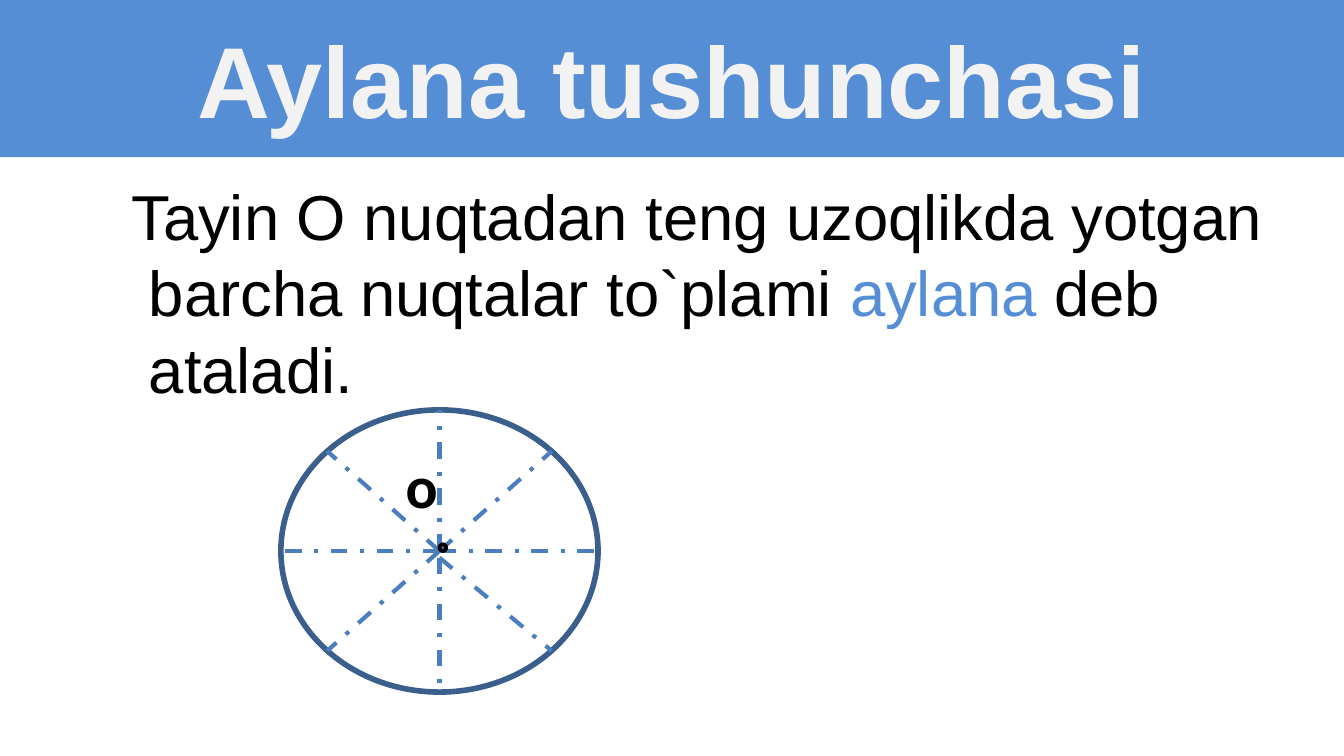
from dataclasses import dataclass
from math import cos, radians, sin

from lxml import etree
from pptx import Presentation
from pptx.dml.color import RGBColor
from pptx.enum.dml import MSO_LINE
from pptx.enum.shapes import MSO_CONNECTOR, MSO_SHAPE
from pptx.enum.text import MSO_ANCHOR, PP_ALIGN
from pptx.oxml.ns import qn
from pptx.util import Inches, Pt

RECT, OVAL = MSO_SHAPE.RECTANGLE, MSO_SHAPE.OVAL
LINE = MSO_CONNECTOR.STRAIGHT
DASH = MSO_LINE.DASH_DOT
MIDDLE, CENTER = MSO_ANCHOR.MIDDLE, PP_ALIGN.CENTER


@dataclass(frozen=True)
class Theme:
    blue: str = "558ED5"
    pale: str = "F2F2F2"
    white: str = "FFFFFF"
    black: str = "000000"
    rim: str = "3A5F8C"
    spoke: str = "4B7EBC"
    dot: str = "4F81BD"
    font: str = "Arial"
    label_font: str = "Calibri"
    title: int = 54
    body: int = 34
    label: int = 32


@dataclass(frozen=True)
class Box:
    left: float
    top: float
    width: float
    height: float

    def emu(self) -> tuple:
        return tuple(map(Inches, (self.left, self.top, self.width, self.height)))


@dataclass(frozen=True)
class Spoke:
    angle: int  # degrees, clockwise from the right
    start: float  # height of the inner end


THEME = Theme()
WIDTH = 10
HEIGHT = WIDTH * 9 / 16
CIRCLE = Box(2.09, 3.05, 2.36, 2.1)
MID_X = CIRCLE.left + CIRCLE.width / 2
MID_Y = CIRCLE.top + CIRCLE.height / 2
LOW_Y = MID_Y + 0.05
SPOKES = [Spoke(a, LOW_Y if a in (45, 90) else MID_Y) for a in range(0, 360, 45)]


def color(code: str) -> RGBColor:
    return RGBColor.from_string(code)


def style(run, font: str, size: int, code: str, bold: bool = False) -> None:
    run.font.name = font
    run.font.size = Pt(size)
    run.font.color.rgb = color(code)
    run.font.bold = bold


def add_shape(slide, kind, box: Box, fill: str, line: str = "", width: float = 0):
    shape = slide.shapes.add_shape(kind, *box.emu())
    shape.shadow.inherit = False
    shape.fill.solid()
    shape.fill.fore_color.rgb = color(fill)
    if line:
        shape.line.color.rgb = color(line)
        shape.line.width = Pt(width)
    else:
        shape.line.fill.background()
    return shape


def add_spoke(slide, spoke: Spoke) -> None:
    turn = radians(spoke.angle)
    tip_x = MID_X + CIRCLE.width / 2 * cos(turn)
    tip_y = MID_Y + CIRCLE.height / 2 * sin(turn)
    ends = map(Inches, (MID_X, spoke.start, tip_x, tip_y))
    line = slide.shapes.add_connector(LINE, *ends)
    line.line.color.rgb = color(THEME.spoke)
    line.line.width = Pt(2.25)
    line.line.dash_style = DASH
    etree.SubElement(line._element.spPr, qn("a:effectLst"))


def add_title(slide) -> None:
    band = add_shape(slide, RECT, Box(0, 0, WIDTH, 1.17), THEME.blue)
    frame = band.text_frame
    frame.text = "Aylana tushunchasi"
    frame.vertical_anchor = MIDDLE
    para = frame.paragraphs[0]
    para.alignment = CENTER
    style(para.runs[0], THEME.font, THEME.title, THEME.pale, True)


def add_body(slide) -> None:
    frame = slide.shapes.add_textbox(*Box(0.63, 1.27, 9, 2.09).emu()).text_frame
    frame.word_wrap = True
    para = frame.paragraphs[0]
    para.space_before = Pt(2.5)
    props = para._p.get_or_add_pPr()
    props.set("marL", str(Inches(0.38)))
    props.set("indent", str(Inches(-0.13)))
    parts = (
        ("Tayin O nuqtadan teng uzoqlikda yotgan barcha nuqtalar to`plami ", THEME.black),
        ("aylana ", THEME.blue),
        ("deb ataladi.", THEME.black),
    )
    for text, code in parts:
        run = para.add_run()
        run.text = text
        style(run, THEME.font, THEME.body, code)


def add_label(slide) -> None:
    frame = slide.shapes.add_textbox(*Box(2.92, 3.29, 0.44, 0.64).emu()).text_frame
    frame.word_wrap = False
    frame.text = "o"
    style(frame.paragraphs[0].runs[0], THEME.label_font, THEME.label, THEME.black, True)


def main() -> None:
    deck = Presentation()
    deck.slide_width, deck.slide_height = Inches(WIDTH), Inches(HEIGHT)
    slide = deck.slides.add_slide(deck.slide_layouts[6])

    # Heading and definition
    add_title(slide)
    add_body(slide)

    # Circle with its radii
    add_shape(slide, OVAL, CIRCLE, THEME.white, THEME.rim, 3)
    for spoke in SPOKES:
        add_spoke(slide, spoke)

    # Centre point and its name
    add_label(slide)
    add_shape(slide, OVAL, Box(3.27, 4.05, 0.05, 0.05), THEME.dot, THEME.black, 2)

    deck.save("out.pptx")


if __name__ == "__main__":
    main()
